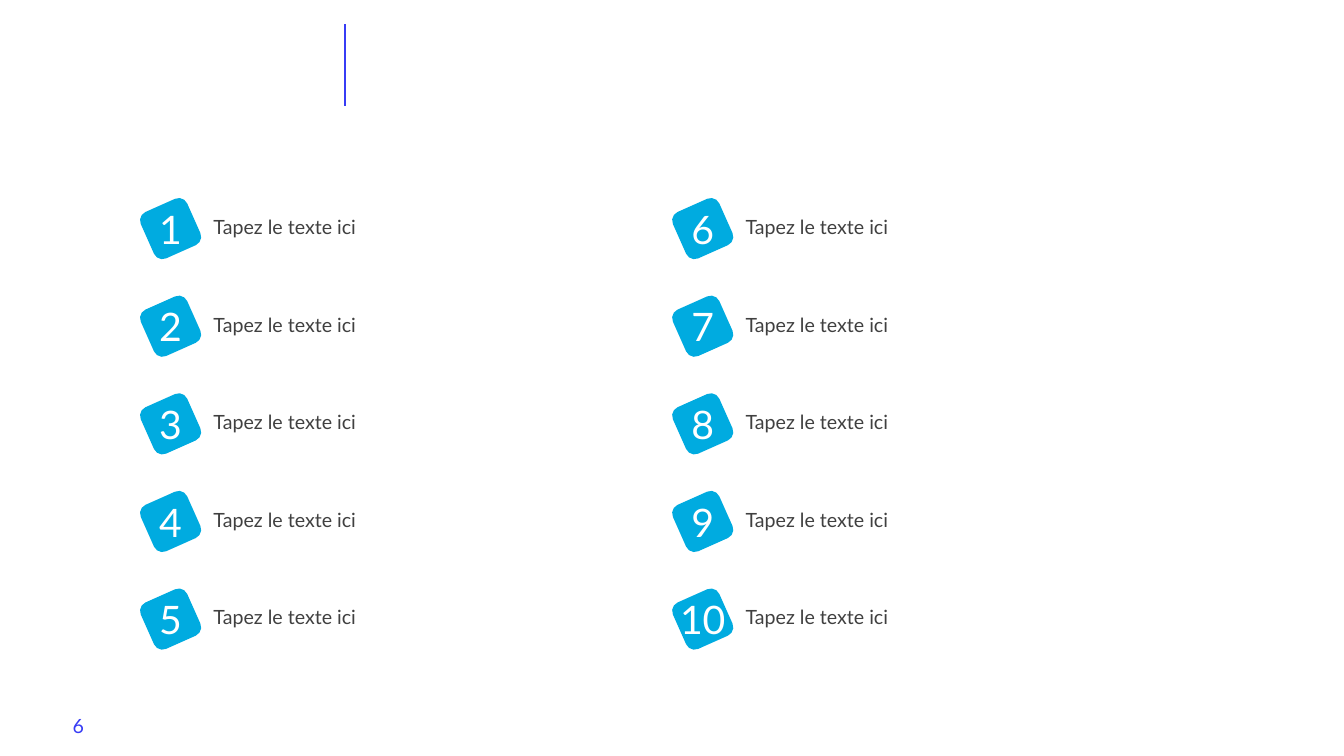
from lxml.etree import SubElement
from pptx import Presentation
from pptx.dml.color import RGBColor
from pptx.enum.shapes import MSO_CONNECTOR, MSO_SHAPE
from pptx.enum.text import MSO_ANCHOR, PP_ALIGN
from pptx.oxml.ns import qn
from pptx.util import Cm, Pt

COLORS = {"accent": "373CF5", "tile": "00ABE0", "white": "FFFFFF", "text": "404040"}
FONT = "Lato"

ROWS, COLS = 5, 2
FIRST_X, FIRST_Y = 4.3, 5.76  # centre of the first tile, in cm
COL_STEP, ROW_STEP = 13.41, 2.46
TILE, TILE_ANGLE, TILE_ROUNDING = 1.28, -24, 0.18
ITEM_H = 1.55
NUMBER_W = 1.24
LABEL_DX, LABEL_W = 0.83, 9.3


def add_text(shapes, text, x, y, w, h, size=14, color="text", align=PP_ALIGN.LEFT,
             anchor=MSO_ANCHOR.MIDDLE, wrap=True, side_margin=0.25, line_spacing=None):
    """Add a one-paragraph text box; lengths are in cm, sizes in points."""
    box = shapes.add_textbox(Cm(x), Cm(y), Cm(w), Cm(h))
    tf = box.text_frame
    tf.word_wrap = wrap
    tf.vertical_anchor = anchor
    tf.margin_left = tf.margin_right = Cm(side_margin)
    p = tf.paragraphs[0]
    p.alignment = align
    if line_spacing:
        p.line_spacing = Pt(line_spacing)
    r = p.add_run()
    r.text = text
    r.font.name = FONT
    r.font.size = Pt(size)
    r.font.color.rgb = RGBColor.from_string(COLORS[color])


prs = Presentation()
prs.slide_width, prs.slide_height = Cm(33.87), Cm(19.05)
s = prs.slides.add_slide(prs.slide_layouts[6])

# Title rule and page number
rule = s.shapes.add_connector(MSO_CONNECTOR.STRAIGHT, Cm(8.69), Cm(0.61), Cm(8.69), Cm(2.67))
rule.line.color.rgb = RGBColor.from_string(COLORS["accent"])
rule.line.width = Pt(1.5)
SubElement(rule._element.spPr, qn("a:effectLst"))
add_text(s.shapes, "6", 0.73, 17.86, 2.49, 0.76, color="accent",
         align=PP_ALIGN.CENTER, anchor=MSO_ANCHOR.TOP)

# Numbered items, filled column by column
for i in range(ROWS * COLS):
    col, row = divmod(i, ROWS)
    cx, cy = FIRST_X + col * COL_STEP, FIRST_Y + row * ROW_STEP
    item = s.shapes.add_group_shape().shapes

    tile = item.add_shape(MSO_SHAPE.ROUNDED_RECTANGLE, Cm(cx - TILE / 2), Cm(cy - TILE / 2),
                          Cm(TILE), Cm(TILE))
    tile.adjustments[0] = TILE_ROUNDING
    tile.rotation = TILE_ANGLE
    tile.shadow.inherit = False
    tile.fill.solid()
    tile.fill.fore_color.rgb = RGBColor.from_string(COLORS["tile"])
    tile.line.fill.background()

    add_text(item, str(i + 1), cx - NUMBER_W / 2, cy - ITEM_H / 2, NUMBER_W, ITEM_H,
             size=28, color="white", align=PP_ALIGN.CENTER, wrap=False, side_margin=0)
    add_text(item, "Tapez le texte ici", cx + LABEL_DX, cy - ITEM_H / 2, LABEL_W, ITEM_H,
             line_spacing=14)

prs.save("out.pptx")
